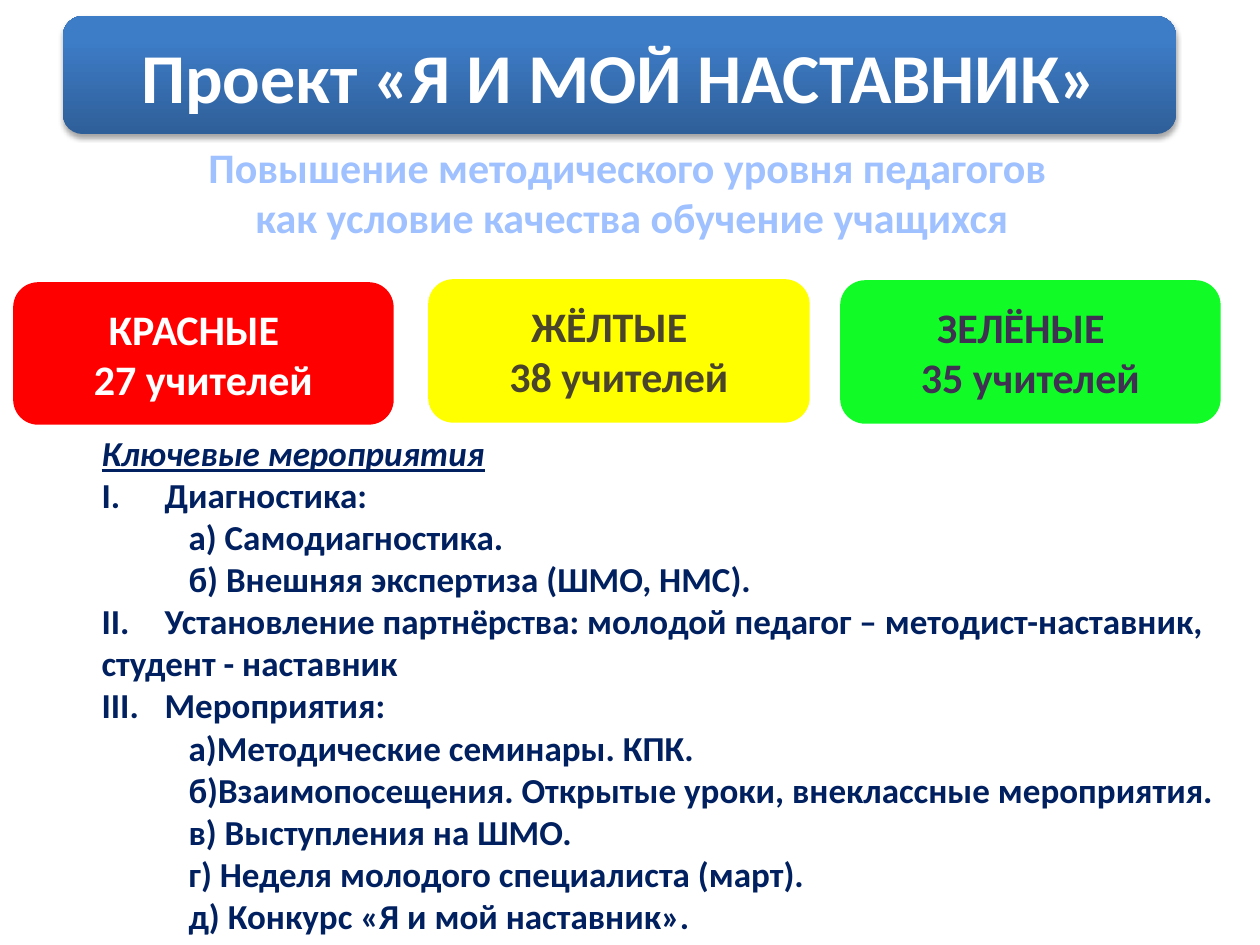
from lxml.etree import SubElement
from pptx import Presentation
from pptx.dml.color import RGBColor
from pptx.enum.shapes import MSO_SHAPE as Shape
from pptx.enum.text import MSO_ANCHOR as Anchor, MSO_AUTO_SIZE as AutoSize, PP_ALIGN as Align
from pptx.oxml.ns import qn
from pptx.util import Pt

PX = 914400 // 126

WHITE = RGBColor(0xFF, 0xFF, 0xFF)
NAVY = RGBColor(0x00, 0x20, 0x60)
SKY = RGBColor(0xA0, 0xC1, 0xFF)
HEADER_DARK = RGBColor(0x2F, 0x5F, 0x99)
HEADER_LIGHT = RGBColor(0x3D, 0x7C, 0xC7)
RED = RGBColor(0xFF, 0x00, 0x00)
YELLOW = RGBColor(0xFF, 0xFF, 0x00)
GREEN = RGBColor(0x11, 0xFB, 0x27)
BROWN = RGBColor(0x4A, 0x45, 0x2A)
VIOLET = RGBColor(0x40, 0x31, 0x52)

HEADER = "Проект «Я И МОЙ НАСТАВНИК»"
SUBTITLE = [
    "Повышение методического уровня педагогов",
    "как условие качества обучение учащихся",
]
GROUPS = [
    (["КРАСНЫЕ", "27 учителей"], (15, 284, 377, 139), RED, WHITE),
    (["ЖЁЛТЫЕ", "38 учителей"], (430, 281, 378, 140), YELLOW, BROWN),
    (["ЗЕЛЁНЫЕ", "35 учителей"], (842, 282, 377, 140), GREEN, VIOLET),
]
EVENTS_HEADING = "Ключевые мероприятия"
EVENTS = [
    ("I.\tДиагностика:", ["а) Самодиагностика.", "б) Внешняя экспертиза (ШМО, НМС)."]),
    ("II.\tУстановление партнёрства: молодой педагог – методист-наставник, "
     "студент - наставник", []),
    ("III.\tМероприятия:", [
        "а)Методические семинары. КПК.",
        "б)Взаимопосещения. Открытые уроки, внеклассные мероприятия.",
        "в) Выступления на ШМО.",
        "г) Неделя молодого специалиста (март).",
        "д) Конкурс «Я и мой наставник».",
    ]),
]
ITEM_INDENT = 87
NUMBER_TAB = 52


def px(*lengths):
    return [length * PX for length in lengths]


def write(frame, text, size=24, color=WHITE, align=Align.CENTER,
          italic=False, underline=False, left=0, right=0, tab=0):
    para = frame.paragraphs[0]
    if para.runs:
        para = frame.add_paragraph()
    para.alignment = align
    props = para._p.get_or_add_pPr()
    props.set("marL", str(left * PX))
    props.set("marR", str(right * PX))
    props.set("indent", "0")
    if tab:
        stops = SubElement(props, qn("a:tabLst"))
        SubElement(stops, qn("a:tab"), pos=str(tab * PX), algn="l")
    span = para.add_run()
    span.text = text
    font = span.font
    font.name, font.size, font.bold = "Calibri", Pt(size), True
    font.italic, font.underline = italic, underline
    font.color.rgb = color


def add_round_box(page, place):
    box = page.shapes.add_shape(Shape.ROUNDED_RECTANGLE, *px(*place))
    box.shadow.inherit = False
    box.text_frame.word_wrap = True
    box.text_frame.vertical_anchor = Anchor.MIDDLE
    return box


def add_header(page):
    box = add_round_box(page, (63, 16, 1113, 118))
    box.line.fill.background()
    box.fill.gradient()
    box.fill.gradient_angle = 90
    for stop, position, color in zip(box.fill.gradient_stops, (0, 0.8),
                                     (HEADER_DARK, HEADER_LIGHT)):
        stop.position = position
        stop.color.rgb = color
    effects = box._element.spPr.find(qn("a:effectLst"))
    shadow = SubElement(effects, qn("a:outerShdw"), blurRad=str(Pt(3.1)),
                        dist=str(Pt(1.8)), dir="5400000", rotWithShape="0")
    shade = SubElement(shadow, qn("a:srgbClr"), val="000000")
    SubElement(shade, qn("a:alpha"), val="35000")
    write(box.text_frame, HEADER, size=40)


def add_subtitle(page):
    frame = page.shapes.add_textbox(*px(89, 135, 1086, 115)).text_frame
    frame.word_wrap = True
    for text, right in zip(SUBTITLE, (9, 0)):
        write(frame, text, color=SKY, right=right)


def add_group(page, lines, place, fill, color):
    box = add_round_box(page, place)
    box.fill.solid()
    box.fill.fore_color.rgb = fill
    box.line.color.rgb = fill
    box.line.width = Pt(2)
    for text, right in zip(lines, (19, 0)):
        write(box.text_frame, text, color=color, right=right)


def fill_events(title):
    title.left, title.top, title.width, title.height = px(89, 423, 1173, 522)
    frame = title.text_frame
    frame.word_wrap = True
    frame.auto_size = AutoSize.NONE
    frame.vertical_anchor = Anchor.MIDDLE
    style = dict(size=20, color=NAVY, align=Align.LEFT)
    write(frame, EVENTS_HEADING, italic=True, underline=True, **style)
    for stage, items in EVENTS:
        write(frame, stage, tab=NUMBER_TAB, **style)
        for item in items:
            write(frame, item, left=ITEM_INDENT, **style)


def main():
    deck = Presentation()
    deck.slide_width, deck.slide_height = px(1260, 945)
    page = deck.slides.add_slide(deck.slide_layouts[5])
    add_header(page)
    add_subtitle(page)
    for group in GROUPS:
        add_group(page, *group)
    fill_events(page.shapes.title)
    deck.save("out.pptx")


if __name__ == "__main__":
    main()
